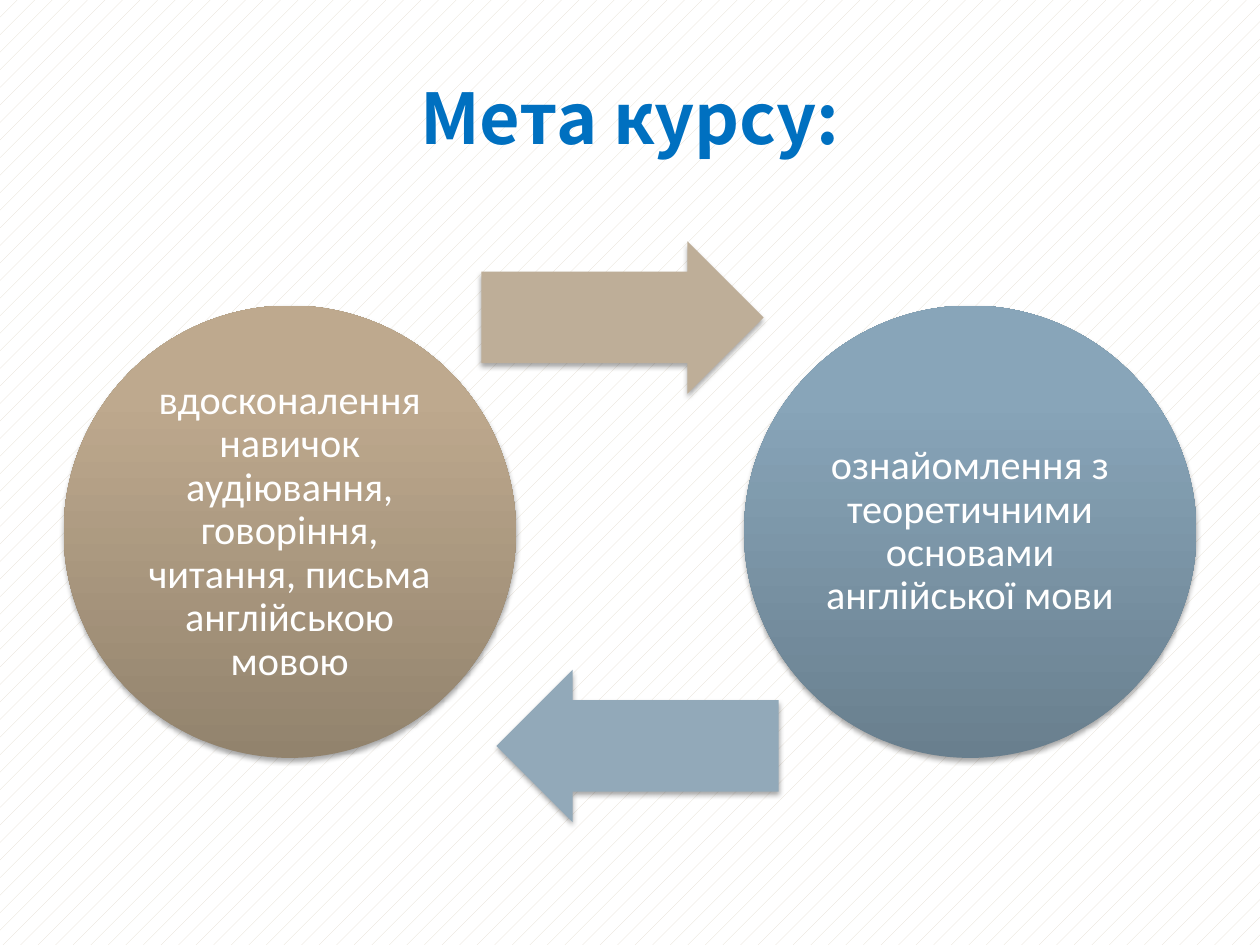
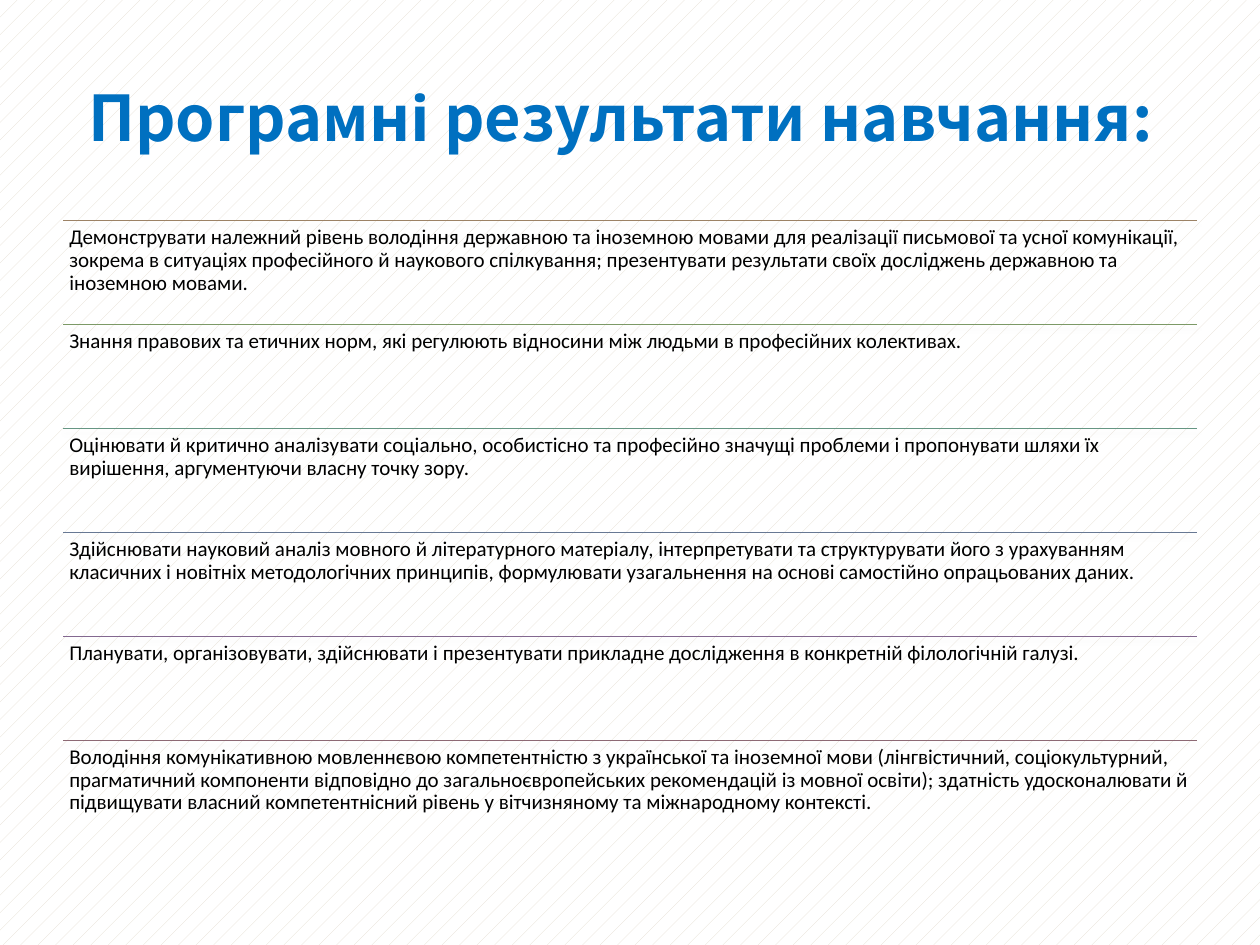
from dataclasses import dataclass

from lxml.etree import SubElement
from pptx import Presentation
from pptx.dml.color import RGBColor
from pptx.enum.dml import MSO_PATTERN
from pptx.enum.shapes import MSO_CONNECTOR, MSO_SHAPE
from pptx.enum.text import MSO_ANCHOR, MSO_AUTO_SIZE, PP_ALIGN
from pptx.oxml.ns import qn
from pptx.util import Inches, Pt


@dataclass(frozen=True)
class Theme:
    title_font: str = "Noto Sans CJK KR"
    body_font: str = "Calibri"
    title: str = "0070C0"
    text: str = "000000"
    light: str = "FFFFFF"
    pattern: str = "E3DCCF"
    shadow: str = "000000"
    circle_size: int = 23
    outcome_size: int = 12
    line_width: float = 0.75


THEME = Theme()
TITLE_ONLY = 5
LEFT, WIDTH = 0.5, 9

# Text, gradient from bottom to top, and fill of the arrow that leaves the circle
GOALS = [
    ("вдосконалення навичок аудіювання, говоріння, читання, письма англійською мовою",
     [(0, "92836D"), (80, "BEA98E"), (100, "BFAA8D")], "BEAE98"),
    ("ознайомлення з теоретичними основами англійської мови",
     [(0, "697F8E"), (80, "88A5B9"), (100, "87A6BB")], "92A9B9"),
]

OUTCOMES = [
    ("9C8265", "Демонструвати належний рівень володіння державною та іноземною мовами для "
     "реалізації письмової та усної комунікації, зокрема в ситуаціях професійного й наукового "
     "спілкування; презентувати результати своїх досліджень державною та іноземною мовами."),
    ("7C9966", "Знання правових та етичних норм, які регулюють відносини між людьми в "
     "професійних колективах."),
    ("669683", "Оцінювати й критично аналізувати соціально, особистісно та професійно значущі "
     "проблеми і пропонувати шляхи їх вирішення, аргументуючи власну точку зору."),
    ("677893", "Здійснювати науковий аналіз мовного й літературного матеріалу, інтерпретувати та "
     "структурувати його з урахуванням класичних і новітніх методологічних принципів, "
     "формулювати узагальнення на основі самостійно опрацьованих даних."),
    ("836890", "Планувати, організовувати, здійснювати і презентувати прикладне дослідження в "
     "конкретній філологічній галузі."),
    ("8D6974", "Володіння комунікативною мовленнєвою компетентністю з української та іноземної "
     "мови (лінгвістичний, соціокультурний, прагматичний компоненти відповідно до "
     "загальноєвропейських рекомендацій із мовної освіти); здатність удосконалювати й "
     "підвищувати власний компетентнісний рівень у вітчизняному та міжнародному контексті."),
]


def rgb(color):
    return RGBColor.from_string(color)


def set_background(master):
    fill = master.background.fill
    fill.patterned()
    fill.pattern = MSO_PATTERN.PERCENT_5
    fill.fore_color.rgb = rgb(THEME.pattern)
    fill.back_color.rgb = rgb(THEME.light)


def add_shadow(sp):
    """Add a soft downward shadow; call it after fill and line are set."""
    effects = SubElement(sp._element.spPr, qn("a:effectLst"))
    shadow = SubElement(effects, qn("a:outerShdw"), blurRad=str(Pt(3.1)), dist=str(Pt(1.8)),
                        dir="5400000", rotWithShape="0")
    color = SubElement(shadow, qn("a:srgbClr"), val=THEME.shadow)
    SubElement(color, qn("a:alpha"), val="35000")


def set_gradient(sp, stops):
    sp.fill.gradient()
    sp.fill.gradient_angle = 90
    stop_list = sp._element.spPr.find(qn("a:gradFill")).find(qn("a:gsLst"))
    for stop in list(stop_list):
        stop_list.remove(stop)
    for percent, color in stops:
        stop = SubElement(stop_list, qn("a:gs"), pos=str(percent * 1000))
        SubElement(stop, qn("a:srgbClr"), val=color)


def add_run(p, text, font, size, color, bold=False):
    r = p.add_run()
    r.text = text
    r.font.name = font
    r.font.size = Pt(size)
    r.font.bold = bold
    r.font.color.rgb = rgb(color)


def write_body(tf, text, size, color, inset, align, anchor):
    tf.word_wrap = True
    tf.vertical_anchor = anchor
    tf.margin_left = tf.margin_right = tf.margin_top = tf.margin_bottom = Inches(inset)
    p = tf.paragraphs[0]
    p.alignment = align
    p.line_spacing = 0.9
    add_run(p, text, THEME.body_font, size, color)


def add_titled_slide(prs, title, size, left, width):
    slide = prs.slides.add_slide(prs.slide_layouts[TITLE_ONLY])
    sp = slide.shapes.title
    sp.left, sp.top, sp.width, sp.height = (Inches(v) for v in (left, 0.3, width, 1.25))
    tf = sp.text_frame
    tf.auto_size = MSO_AUTO_SIZE.NONE
    tf.vertical_anchor = MSO_ANCHOR.MIDDLE
    p = tf.paragraphs[0]
    p.alignment = PP_ALIGN.CENTER
    add_run(p, title, THEME.title_font, size, THEME.title, bold=True)
    return slide


def add_centred_shape(slide, kind, center_x, center_y, width, height):
    sp = slide.shapes.add_shape(kind, Inches(center_x - width / 2), Inches(center_y - height / 2),
                                Inches(width), Inches(height))
    sp.line.fill.background()
    return sp


def add_circle(slide, center_x, center_y, text, stops):
    sp = add_centred_shape(slide, MSO_SHAPE.OVAL, center_x, center_y, 3.59, 3.59)
    set_gradient(sp, stops)
    add_shadow(sp)
    write_body(sp.text_frame, text, THEME.circle_size, THEME.light, 0.03,
               PP_ALIGN.CENTER, MSO_ANCHOR.MIDDLE)


def add_arrow(slide, center_x, center_y, color, rotation):
    sp = add_centred_shape(slide, MSO_SHAPE.RIGHT_ARROW, center_x, center_y, 2.24, 1.21)
    sp.adjustments[0], sp.adjustments[1] = 0.6, 0.5
    sp.rotation = rotation
    sp.fill.solid()
    sp.fill.fore_color.rgb = rgb(color)
    add_shadow(sp)


def add_cycle(slide, goals):
    """Place two circles side by side, joined by an arrow above and one below."""
    middle_x, middle_y = 5, 4.22
    for side, (text, stops, arrow_color) in zip((-1, 1), goals):
        add_circle(slide, middle_x + side * 2.7, middle_y, text, stops)
        add_arrow(slide, middle_x + side * 0.06, middle_y + side * 1.7, arrow_color,
                  0 if side < 0 else 180)


def add_outcome(slide, top, height, color, text):
    line = slide.shapes.add_connector(MSO_CONNECTOR.STRAIGHT, Inches(LEFT), Inches(top),
                                      Inches(LEFT + WIDTH), Inches(top))
    line.line.color.rgb = rgb(color)
    line.line.width = Pt(THEME.line_width)
    add_shadow(line)
    box = slide.shapes.add_textbox(Inches(LEFT), Inches(top), Inches(WIDTH), Inches(height))
    write_body(box.text_frame, text, THEME.outcome_size, THEME.text, 0.05,
               PP_ALIGN.LEFT, MSO_ANCHOR.TOP)


def add_outcomes(slide, outcomes):
    top, height = 1.75, 4.95
    row = height / len(outcomes)
    for i, (color, text) in enumerate(outcomes):
        add_outcome(slide, top + i * row, row, color, text)


def main():
    prs = Presentation()
    prs.slide_width, prs.slide_height = Inches(10), Inches(7.5)
    set_background(prs.slide_master)
    add_cycle(add_titled_slide(prs, "Мета курсу:", 40, LEFT, WIDTH), GOALS)
    add_outcomes(add_titled_slide(prs, "Програмні результати навчання:", 36, 0.35, 9.15), OUTCOMES)
    prs.save("out.pptx")


if __name__ == "__main__":
    main()
